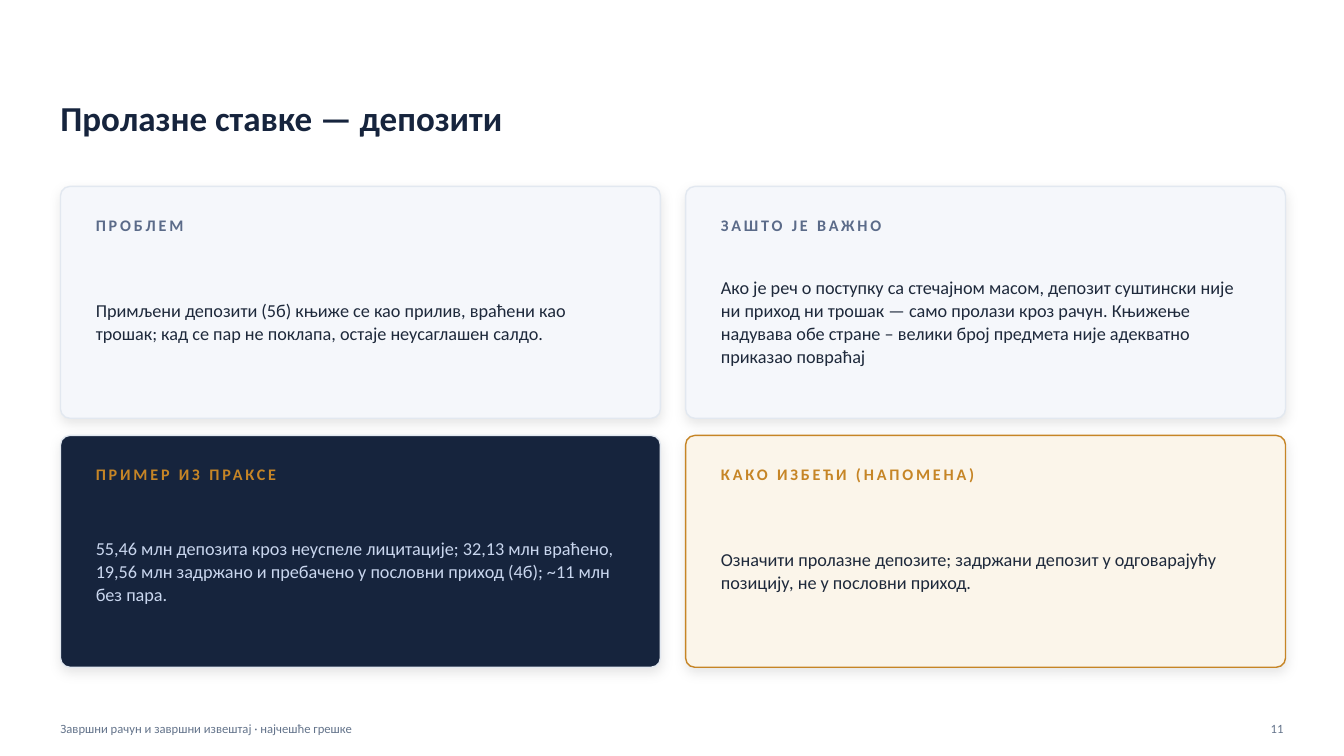
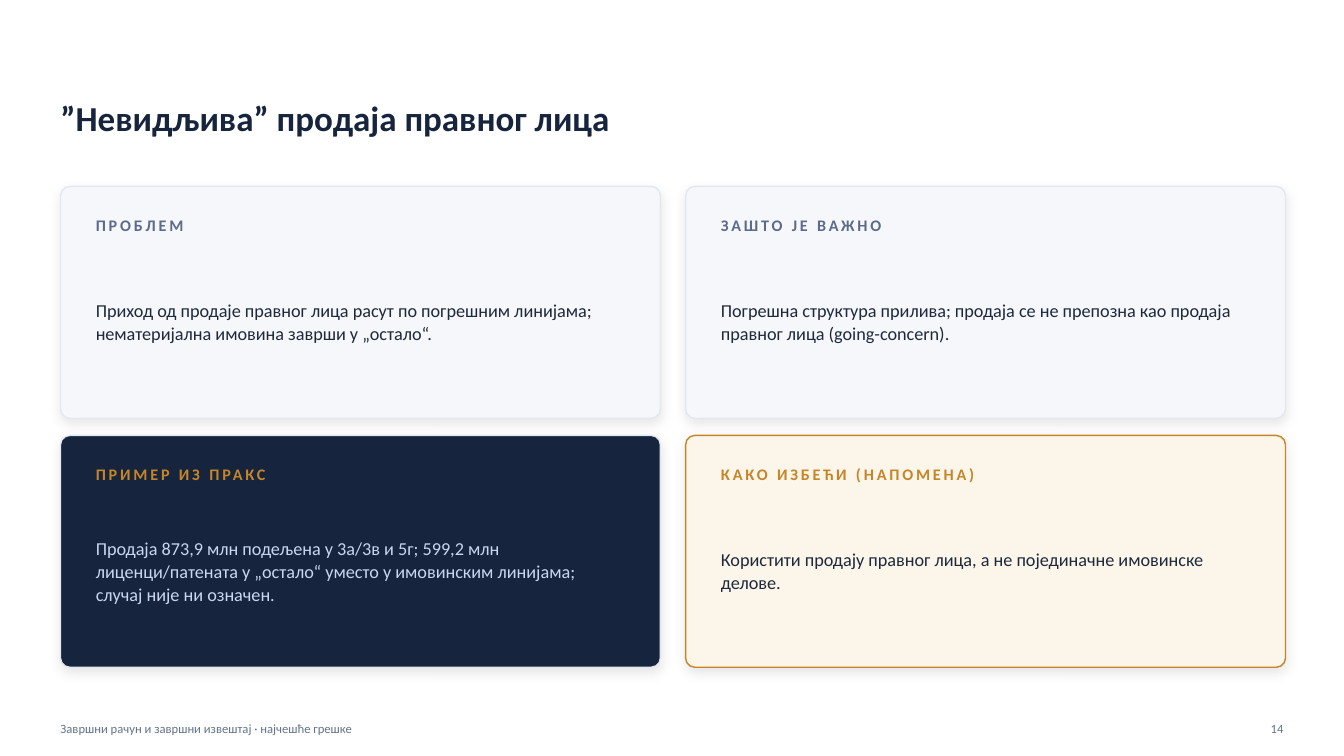
from dataclasses import dataclass

from lxml import etree
from pptx import Presentation
from pptx.dml.color import RGBColor
from pptx.enum import shapes, text
from pptx.oxml.ns import qn
from pptx.util import Inches, Pt

FONT = "Calibri"
NAVY, AMBER, SLATE = "16243D", "C68526", "64748B"
PALE, BORDER, INK = "F5F7FB", "E2E8F0", "1E293B"
FOOTER = "Завршни рачун и завршни извештај · најчешће грешке"

LEFT, TOP = 0.6, 1.85
CARD_WIDTH, CARD_HEIGHT = 5.95, 2.3
COLUMN_GAP, ROW_GAP = 0.25, 0.17
PADDING = 0.35


@dataclass
class CardStyle:
    fill: str
    line: str
    heading: str
    body: str


CARD_STYLES = [
    CardStyle(PALE, BORDER, "5B6B89", INK),
    CardStyle(PALE, BORDER, "5B6B89", INK),
    CardStyle(NAVY, BORDER, AMBER, "C9D6EE"),
    CardStyle("FBF5EA", AMBER, AMBER, INK),
]

SLIDES = [
    {
        "title": "Пролазне ставке — депозити",
        "number": "11",
        "cards": [
            ("ПРОБЛЕМ",
             "Примљени депозити (5б) књиже се као прилив, враћени као трошак; "
             "кад се пар не поклапа, остаје неусаглашен салдо."),
            ("ЗАШТО ЈЕ ВАЖНО",
             "Ако је реч о поступку са стечајном масом, депозит суштински није "
             "ни приход ни трошак — само пролази кроз рачун. Књижење надувава "
             "обе стране – велики број предмета није адекватно приказао повраћај"),
            ("ПРИМЕР ИЗ ПРАКСЕ",
             "55,46 млн депозита кроз неуспеле лицитације; 32,13 млн враћено, "
             "19,56 млн задржано и пребачено у пословни приход (4б); "
             "~11 млн без пара."),
            ("КАКО ИЗБЕЋИ (НАПОМЕНА)",
             "Означити пролазне депозите; задржани депозит у одговарајућу "
             "позицију, не у пословни приход."),
        ],
    },
    {
        "title": "”Невидљива” продаја правног лица",
        "number": "14",
        "cards": [
            ("ПРОБЛЕМ",
             "Приход од продаје правног лица расут по погрешним линијама; "
             "нематеријална имовина заврши у „остало“."),
            ("ЗАШТО ЈЕ ВАЖНО",
             "Погрешна структура прилива; продаја се не препозна као продаја "
             "правног лица (going-concern)."),
            ("ПРИМЕР ИЗ ПРАКС",
             "Продаја 873,9 млн подељена у 3а/3в и 5г; 599,2 млн "
             "лиценци/патената у „остало“ уместо у имовинским линијама; "
             "случај није ни означен."),
            ("КАКО ИЗБЕЋИ (НАПОМЕНА)",
             "Користити продају правног лица, а не појединачне имовинске "
             "делове."),
        ],
    },
]


def rgb(value):
    return RGBColor.from_string(value)


def set_attributes(target, values):
    for name, value in values.items():
        setattr(target, name, value)


def write(shape, content, size, color, bold=False, spacing=None,
          align=text.PP_ALIGN.LEFT, line_spacing=1.0):
    """Fill a shape with one paragraph; spacing is the letter spacing in points."""
    frame = shape.text_frame
    set_attributes(frame, {
        "word_wrap": True, "auto_size": text.MSO_AUTO_SIZE.NONE,
        "vertical_anchor": text.MSO_ANCHOR.MIDDLE,
        "margin_left": 0, "margin_top": 0, "margin_right": 0, "margin_bottom": 0,
    })
    paragraph = frame.paragraphs[0]
    set_attributes(paragraph, {"alignment": align, "line_spacing": line_spacing})
    run = paragraph.add_run()
    run.text = content
    set_attributes(run.font, {"name": FONT, "size": Pt(size), "bold": bold})
    run.font.color.rgb = rgb(color)
    if spacing:
        run._r.get_or_add_rPr().set("spc", str(spacing * 100))


def add_text(slide, box, content, size, color, **options):
    shape = slide.shapes.add_textbox(*map(Inches, box))
    write(shape, content, size, color, **options)


def add_title(slide, content):
    title = slide.shapes.title
    set_attributes(title, {
        "left": Inches(LEFT), "top": Inches(0.74),
        "width": Inches(12.1), "height": Inches(0.85),
    })
    write(title, content, 25, NAVY, bold=True)


def add_footer(slide, number):
    add_text(slide, (LEFT, 7.08, 9, 0.3), FOOTER, 9, SLATE)
    add_text(slide, (12.23, 7.08, 0.5, 0.3), number, 9, SLATE,
             align=text.PP_ALIGN.RIGHT)


def add_soft_shadow(shape):
    shape.shadow.inherit = False
    effects = shape.element.spPr.find(qn("a:effectLst"))
    shadow = etree.SubElement(effects, qn("a:outerShdw"), {
        "blurRad": str(Pt(9)), "dist": str(Pt(3)), "dir": "5400000",
        "algn": "bl", "rotWithShape": "0",
    })
    color = etree.SubElement(shadow, qn("a:srgbClr"), val="000000")
    etree.SubElement(color, qn("a:alpha"), val="10000")


def add_card(slide, index, heading, body):
    """Place a card in the two-column grid, counting row by row."""
    style = CARD_STYLES[index]
    row, column = divmod(index, 2)
    left = LEFT + column * (CARD_WIDTH + COLUMN_GAP)
    top = TOP + row * (CARD_HEIGHT + ROW_GAP)
    card = slide.shapes.add_shape(
        shapes.MSO_SHAPE.ROUNDED_RECTANGLE,
        *map(Inches, (left, top, CARD_WIDTH, CARD_HEIGHT)))
    card.adjustments[0] = 0.04
    card.fill.solid()
    card.fill.fore_color.rgb = rgb(style.fill)
    card.line.color.rgb = rgb(style.line)
    card.line.width = Pt(1)
    add_soft_shadow(card)

    text_left, text_width = left + PADDING, CARD_WIDTH - 2 * PADDING
    add_text(slide, (text_left, top + 0.22, text_width, 0.32), heading,
             11.5, style.heading, bold=True, spacing=2)
    add_text(slide, (text_left, top + 0.58, text_width, 1.52), body,
             13, style.body, line_spacing=1.05)


def add_cards_slide(presentation, content):
    title_only = presentation.slide_layouts[5]
    slide = presentation.slides.add_slide(title_only)
    add_title(slide, content["title"])
    add_footer(slide, content["number"])
    for index, (heading, body) in enumerate(content["cards"]):
        add_card(slide, index, heading, body)


def main():
    presentation = Presentation()
    presentation.slide_width = Inches(13.33)
    presentation.slide_height = Inches(7.5)
    for content in SLIDES:
        add_cards_slide(presentation, content)
    presentation.save("out.pptx")


if __name__ == "__main__":
    main()
